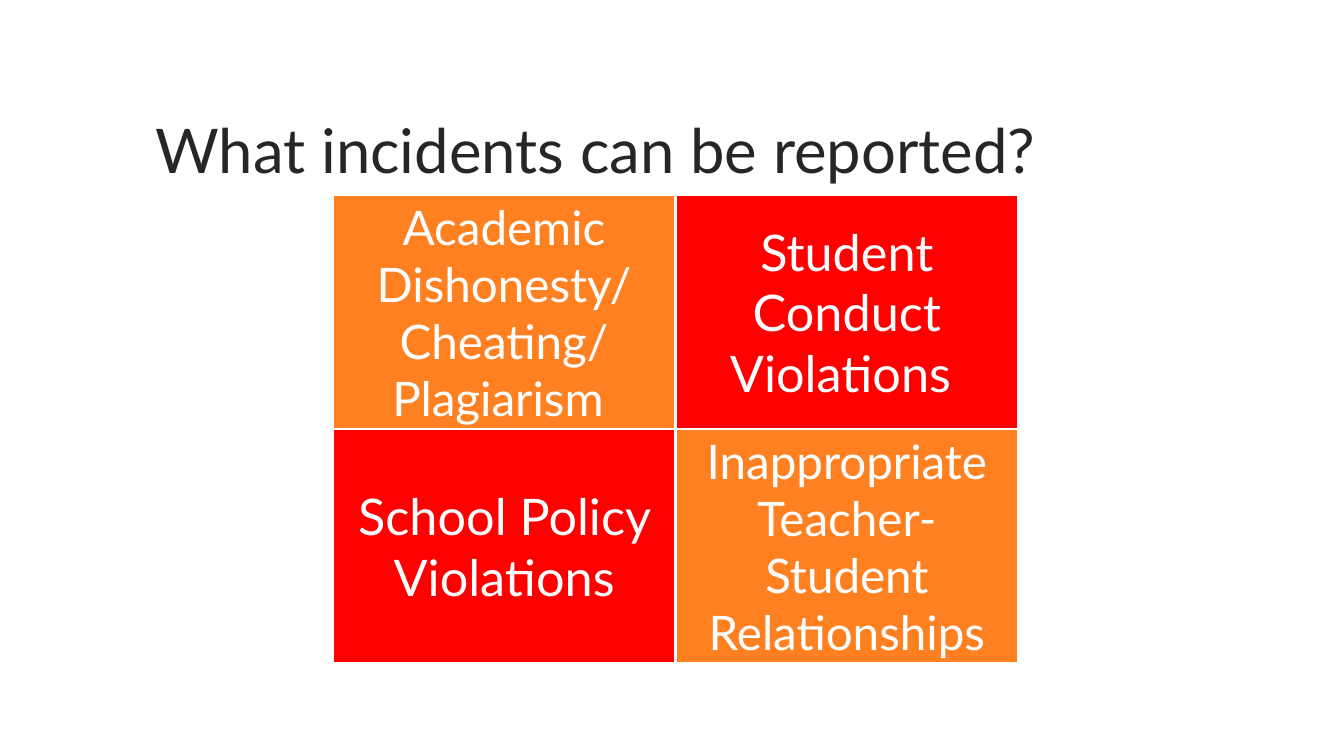
from pptx import Presentation
from pptx.dml.color import RGBColor
from pptx.enum import shapes, text
from pptx.util import Inches, Pt

WIDE, HIGH = 13.33, 7.5
ORANGE, RED, WHITE, INK = "FF8021", "FF0000", "FFFFFF", "262626"
CELLS = [
    ("Academic Dishonesty/ Cheating/ Plagiarism ", ORANGE, 34),
    ("Student Conduct Violations ", RED, 36),
    ("School Policy Violations", RED, 36),
    ("Inappropriate Teacher-Student Relationships", ORANGE, 34),
]


def tint(code):
    """Turn a hex string into a colour."""
    return RGBColor.from_string(code)


def write(shape, words, size, color, align=text.PP_ALIGN.LEFT, lead=1.0):
    """Put formatted, vertically centred text into a shape."""
    frame = shape.text_frame
    frame.word_wrap = True
    frame.auto_size = text.MSO_AUTO_SIZE.NONE
    frame.vertical_anchor = text.MSO_ANCHOR.MIDDLE
    frame.margin_top = frame.margin_bottom = 0
    para = frame.paragraphs[0]
    para.alignment, para.line_spacing = align, lead
    run = para.add_run()
    run.text = words
    run.font.name, run.font.size = "Lato", Pt(size)
    run.font.color.rgb = tint(color)


def head(slide, box):
    """Place the title in its box."""
    title = slide.shapes.title
    title.left, title.top, title.width, title.height = map(Inches, box)
    write(title, "What incidents can be reported?", 44, INK, lead=0.9)


def grid(slide, box, cols=2):
    """Fill a box with equal coloured tiles, one for each incident."""
    left, top, width, height = box
    wide, high = width / cols, height * cols / len(CELLS)
    for i, (words, fill, size) in enumerate(CELLS):
        row, col = divmod(i, cols)
        spot = (left + col * wide, top + row * high, wide, high)
        tile = slide.shapes.add_shape(
            shapes.MSO_SHAPE.RECTANGLE, *map(Inches, spot))
        tile.shadow.inherit = False
        tile.fill.solid()
        tile.fill.fore_color.rgb = tint(fill)
        tile.line.color.rgb = tint(WHITE)
        tile.line.width = Pt(1.5)
        write(tile, words, size, WHITE, align=text.PP_ALIGN.CENTER)


def main():
    """Build and save the slide."""
    deck = Presentation()
    deck.slide_width, deck.slide_height = Inches(WIDE), Inches(HIGH)
    slide = deck.slides.add_slide(deck.slide_layouts.get_by_name("Title Only"))
    head(slide, (WIDE * 0.108, 0.8, WIDE * 0.789, 1.45))
    grid(slide, (3.3, 1.93, 6.8, 4.65))
    deck.save("out.pptx")


if __name__ == "__main__":
    main()
